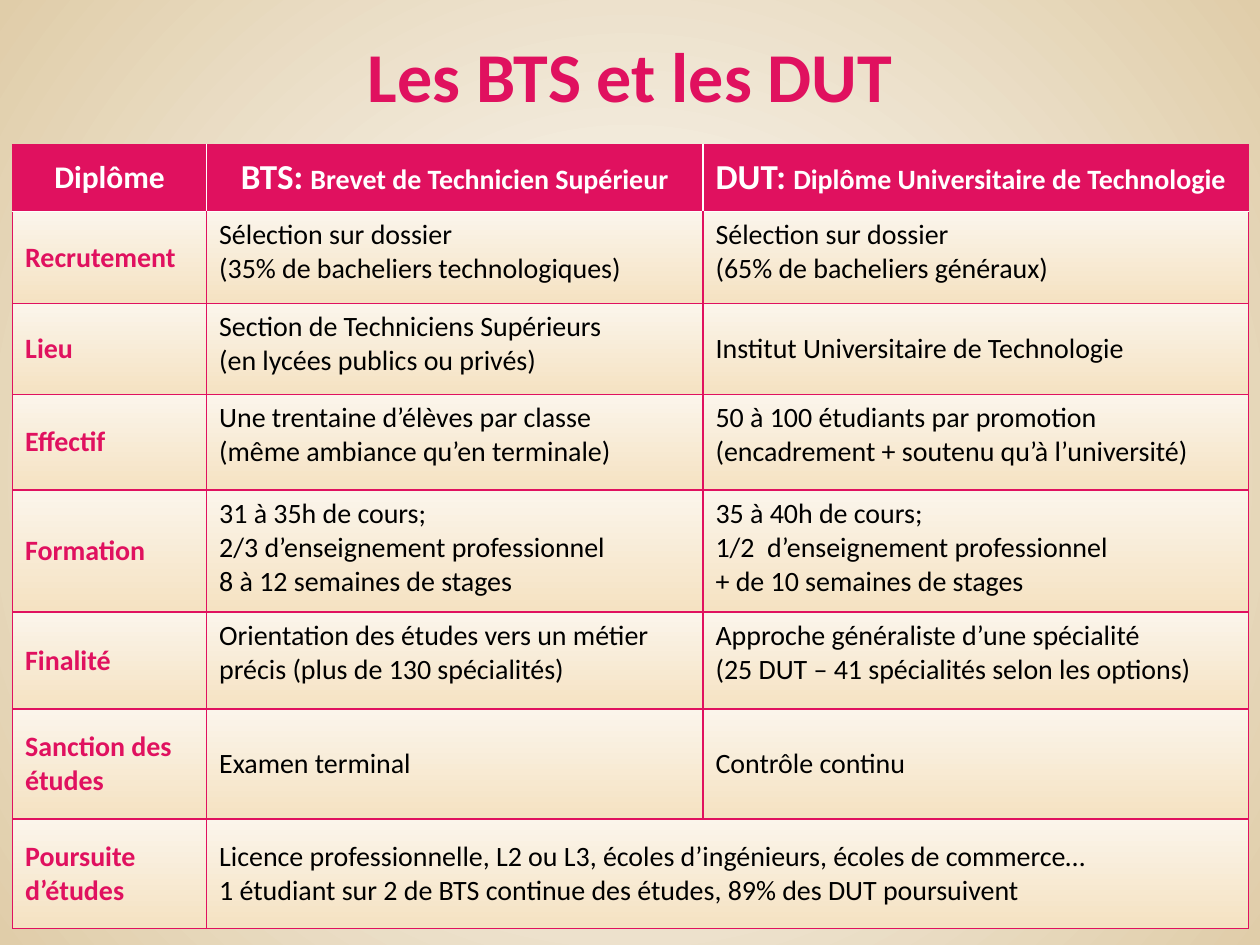
from dataclasses import dataclass

from lxml import etree
from pptx import Presentation
from pptx.dml.color import RGBColor
from pptx.enum.text import MSO_ANCHOR, PP_ALIGN
from pptx.oxml import parse_xml
from pptx.oxml.ns import nsdecls, qn
from pptx.util import Inches, Pt

MIDDLE, TOP = MSO_ANCHOR.MIDDLE, MSO_ANCHOR.TOP
CENTER, LEFT = PP_ALIGN.CENTER, PP_ALIGN.LEFT
PINK, WHITE, BLACK = "E0115F", "FFFFFF", "000000"
SAND, CREAM, EDGE = "F5E2C2", "FBF5EB", "E0CDA9"
COLUMNS = (1.54, 3.94, 4.33)
HEADER_HEIGHT = 0.53


@dataclass
class Heading:
    runs: list[tuple[str, int]]
    align: PP_ALIGN = CENTER


@dataclass
class Row:
    label: str
    bts: str
    dut: str
    height: float
    anchors: tuple = (TOP, TOP)


HEADINGS = [
    Heading([("Diplôme", 18)]),
    Heading([("BTS:", 20), (" ", 18), ("Brevet de Technicien Supérieur", 16)]),
    Heading([("DUT:", 20), (" ", 18), ("Diplôme Universitaire de Technologie", 16)], LEFT),
]
# Line feeds separate paragraphs
ROWS = [
    Row("Recrutement", "Sélection sur dossier\n(35% de bacheliers technologiques)",
        "Sélection sur dossier\n(65% de bacheliers généraux)", 0.73),
    Row("Lieu", "Section de Techniciens Supérieurs\n(en lycées publics ou privés)",
        "Institut Universitaire de Technologie", 0.72, (TOP, MIDDLE)),
    Row("Effectif", "Une trentaine d’élèves par classe\n(même ambiance qu’en terminale)",
        "50 à 100 étudiants par promotion (encadrement + soutenu qu’à l’université)", 0.76),
    Row("Formation",
        "31 à 35h de cours;\n2/3 d’enseignement professionnel\n8 à 12 semaines de stages",
        "35 à 40h de cours;\n1/2  d’enseignement professionnel\n+ de 10 semaines de stages", 0.97),
    Row("Finalité", "Orientation des études vers un métier précis (plus de 130 spécialités)",
        "Approche généraliste d’une spécialité\n(25 DUT – 41 spécialités selon les options)", 0.77),
    Row("Sanction des études", "Examen terminal", "Contrôle continu", 0.87, (MIDDLE, MIDDLE)),
    Row("Poursuite\nd’études",
        "Licence professionnelle, L2 ou L3, écoles d’ingénieurs, écoles de commerce…\n"
        "1 étudiant sur 2 de BTS continue des études, 89% des DUT poursuivent",
        "", 0.87, (MIDDLE, MIDDLE)),
]


def rgb(color: str) -> RGBColor:
    return RGBColor.from_string(color)


def add_run(p, text: str, size: int, color: str, bold: bool) -> None:
    r = p.add_run()
    r.text = text
    for name, value in {"name": "Calibri", "size": Pt(size), "bold": bold}.items():
        setattr(r.font, name, value)
    r.font.color.rgb = rgb(color)


def set_background(s) -> None:
    """Radial gradient, white in the middle."""
    s.background.fill.gradient()
    for stop, color in zip(s.background.fill.gradient_stops, (WHITE, EDGE)):
        stop.color.rgb = rgb(color)
    lin = next(s.background._cSld.iter(qn("a:lin")))
    lin.getparent().replace(lin, parse_xml(
        f'<a:path {nsdecls("a")} path="circle">'
        '<a:fillToRect l="50000" t="50000" r="50000" b="50000"/></a:path>'))


def set_borders(cell, colors: dict[str, str]) -> None:
    tcPr = cell._tc.get_or_add_tcPr()
    for i, (side, color) in enumerate(colors.items()):
        ln = etree.Element(qn(f"a:ln{side}"), w=str(Pt(1)))
        fill = etree.SubElement(ln, qn("a:solidFill"))
        etree.SubElement(fill, qn("a:srgbClr"), val=color)
        tcPr.insert(i, ln)


def fill_heading(cell, heading: Heading, col: int) -> None:
    cell.vertical_anchor = MIDDLE
    p = cell.text_frame.paragraphs[0]
    p.alignment, p.line_spacing = heading.align, 0.9
    for text, size in heading.runs:
        add_run(p, text, size, WHITE, True)
    cell.fill.solid()
    cell.fill.fore_color.rgb = rgb(PINK)
    last = len(COLUMNS) - 1
    set_borders(cell, {"L": WHITE if col else PINK, "R": WHITE if col < last else PINK,
                       "T": PINK, "B": WHITE})


def fill_body(cell, text: str, anchor, is_label: bool, top: str) -> None:
    cell.vertical_anchor = anchor
    tf = cell.text_frame
    for i, line in enumerate(text.split("\n") if text else []):
        p = tf.add_paragraph() if i else tf.paragraphs[0]
        add_run(p, line, 16, PINK if is_label else BLACK, is_label)
    cell.fill.gradient()
    cell.fill.gradient_angle = 90
    for stop, color in zip(cell.fill.gradient_stops, (SAND, CREAM)):
        stop.color.rgb = rgb(color)
    set_borders(cell, {"L": PINK, "R": PINK, "T": top, "B": PINK})


def add_comparison(s) -> None:
    heights = [HEADER_HEIGHT] + [row.height for row in ROWS]
    table = s.shapes.add_table(len(heights), len(COLUMNS), Inches(0.1), Inches(1.15),
                               Inches(sum(COLUMNS)), Inches(sum(heights))).table
    for column, width in zip(table.columns, COLUMNS):
        column.width = Inches(width)
    for line, height in zip(table.rows, heights):
        line.height = Inches(height)
    for col, heading in enumerate(HEADINGS):
        fill_heading(table.cell(0, col), heading, col)
    for n, row in enumerate(ROWS, 1):
        texts = (row.label, row.bts, row.dut)
        for col, (text, anchor) in enumerate(zip(texts, (MIDDLE, *row.anchors))):
            fill_body(table.cell(n, col), text, anchor, col == 0, WHITE if n == 1 else PINK)
        if not row.dut:
            table.cell(n, 1).merge(table.cell(n, 2))


def main() -> None:
    prs = Presentation()
    prs.slide_width, prs.slide_height = Inches(10), Inches(7.5)
    s = prs.slides.add_slide(prs.slide_layouts[5])
    set_background(s)

    # Title
    title = s.shapes.title
    box = {"left": 0, "top": 0.28, "width": 10, "height": 0.71}
    for name, value in box.items():
        setattr(title, name, Inches(value))
    title.text_frame.vertical_anchor = MIDDLE
    p = title.text_frame.paragraphs[0]
    p.alignment, p.line_spacing = CENTER, 0.9
    add_run(p, "Les BTS et les DUT", 40, PINK, True)

    # Comparison table
    add_comparison(s)
    prs.save("out.pptx")


if __name__ == "__main__":
    main()
